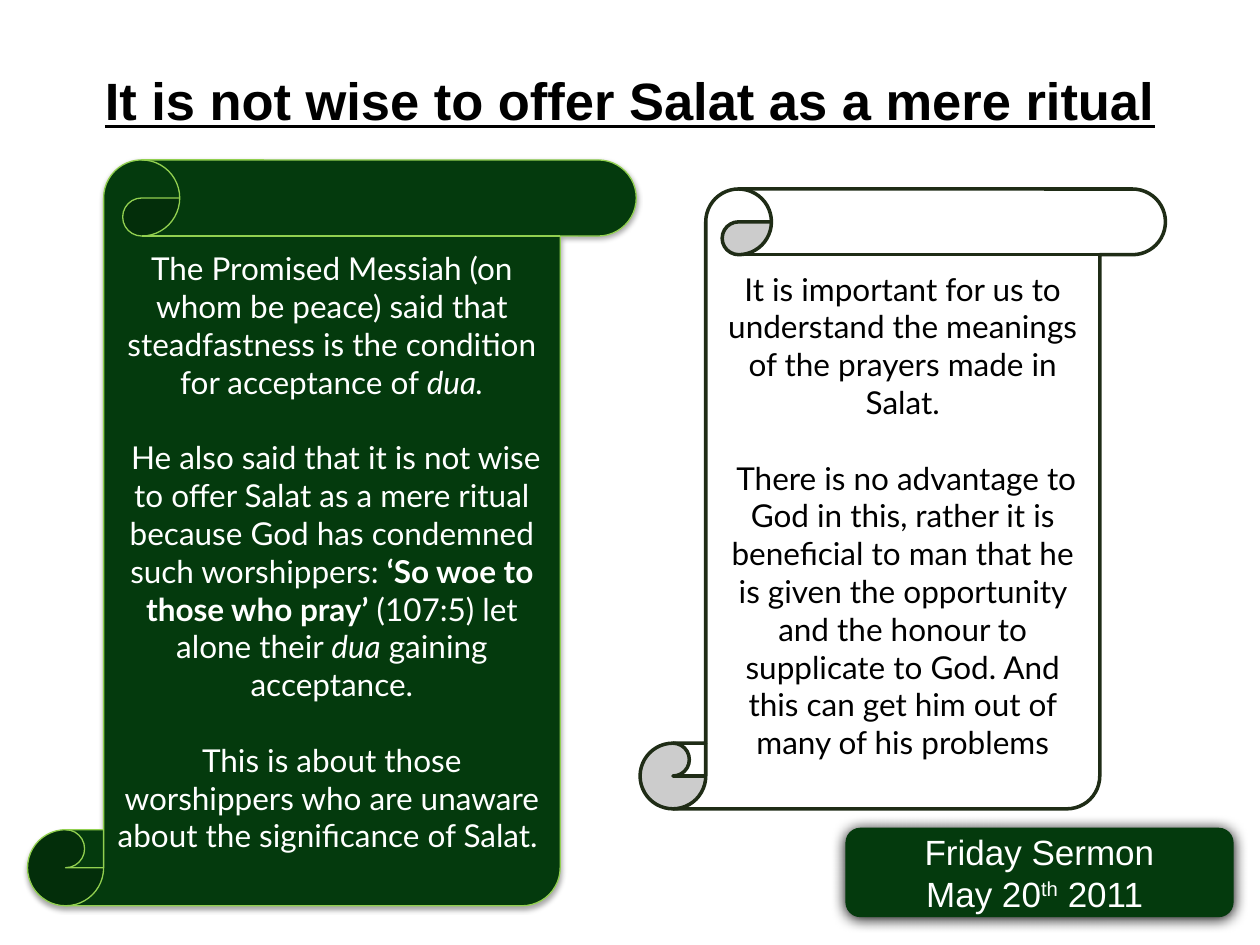
import pptx
import pptx.util
import pptx.dml.color
import pptx.enum.shapes
import pptx.enum.text
import pptx.oxml
import pptx.oxml.ns

Pt = pptx.util.Pt
RGB = pptx.dml.color.RGBColor
Kind = pptx.enum.shapes.MSO_SHAPE
Align = pptx.enum.text.PP_ALIGN
Anchor = pptx.enum.text.MSO_ANCHOR

GREEN = RGB(0x04, 0x3A, 0x0D)
LIME = RGB(0x92, 0xD0, 0x50)
OLIVE = RGB(0x1F, 0x2C, 0x16)
WHITE = RGB(0xFF, 0xFF, 0xFF)
BLACK = RGB(0x00, 0x00, 0x00)

BOLD = {"bold": True}
SLANT = {"italic": True}
RAISED = {"raised": True}

# Each paragraph is a list of (words, format) runs.
TITLE = [[("It is not wise to offer Salat as a mere ritual", {"bold": True, "underline": True})]]
LEFT = [
    [("The Promised Messiah (on whom be peace) said that steadfastness is the "
      "condition for acceptance of ", {}), ("dua.", SLANT)],
    [(" He also said that it is not wise to offer Salat as a mere ritual because "
      "God has condemned such worshippers: ", {}),
     ("‘So woe to those who pray’", BOLD), (" (107:5) let alone their ", {}),
     ("dua", SLANT), (" gaining acceptance.", {})],
    [("This is about those worshippers who are unaware about the significance "
      "of Salat. ", {})],
]
RIGHT = [
    [("It is important for us to understand the meanings of the prayers made in "
      "Salat.", {})],
    [(" There is no advantage to God in this, rather it is beneficial to man that "
      "he is given the opportunity and the honour to supplicate to God. And this "
      "can get him out of many of his problems", {})],
]
DATE = [
    [("Friday Sermon", {})],
    [("May 20", {}), ("th", RAISED), (" 2011 ", {})],
]

SCROLL = {"name": "Lato", "size": Pt(18)}
SHAPES = [
    {"kind": Kind.VERTICAL_SCROLL, "box": (15.8, 91.4, 347.8, 426.2), "fill": GREEN,
     "line": (LIME, 0.75), "shade": (35, 3.1, 1.8), "text": LEFT,
     "font": SCROLL, "ink": WHITE, "gap": 21.6},
    {"kind": Kind.VERTICAL_SCROLL, "box": (365.8, 108, 300.2, 354.2), "fill": WHITE,
     "line": (OLIVE, 2), "shade": None, "text": RIGHT,
     "font": SCROLL, "ink": BLACK, "gap": 21.6},
    {"kind": Kind.ROUNDED_RECTANGLE, "box": (483.1, 473, 221.8, 51.1), "fill": GREEN,
     "line": None, "shade": (100, 8.5, 1), "text": DATE,
     "font": {"name": "Arial", "size": Pt(20)}, "ink": WHITE, "gap": 0},
]


def write(frame, paras, font, ink, gap=0):
    """Fill a text frame with centred paragraphs, gap points apart."""
    frame.word_wrap = True
    for i, runs in enumerate(paras):
        para = frame.add_paragraph() if i else frame.paragraphs[0]
        para.alignment = Align.CENTER
        para.space_before = Pt(gap if i else 0)
        for words, style in runs:
            run = para.add_run()
            run.text = words
            run.font.color.rgb = ink
            for key, value in {**font, **style}.items():
                if key == "raised":
                    run._r.get_or_add_rPr().set("baseline", "30000")
                else:
                    setattr(run.font, key, value)


def shade(shape, alpha, blur, drop):
    """Cast a black shadow straight down."""
    shape._element.spPr.append(pptx.oxml.parse_xml(
        f'<a:effectLst {pptx.oxml.ns.nsdecls("a")}>'
        f'<a:outerShdw blurRad="{Pt(blur)}" dist="{Pt(drop)}" dir="5400000" '
        f'algn="ctr" rotWithShape="0"><a:srgbClr val="{BLACK}">'
        f'<a:alpha val="{alpha * 1000}"/></a:srgbClr></a:outerShdw></a:effectLst>'))


def draw(slide, item):
    shape = slide.shapes.add_shape(item["kind"], *map(Pt, item["box"]))
    shape.fill.solid()
    shape.fill.fore_color.rgb = item["fill"]
    if item["line"]:
        color, width = item["line"]
        shape.line.color.rgb = color
        shape.line.width = Pt(width)
    else:
        shape.line.fill.background()
    if item["shade"]:
        shade(shape, *item["shade"])
    else:
        shape.shadow.inherit = False
    shape.text_frame.vertical_anchor = Anchor.MIDDLE
    write(shape.text_frame, item["text"], item["font"], item["ink"], item["gap"])


def main():
    deck = pptx.Presentation()
    deck.slide_width, deck.slide_height = Pt(720), Pt(540)
    slide = deck.slides.add_slide(deck.slide_layouts[6])

    head = slide.shapes.add_textbox(Pt(36), Pt(36), Pt(648), Pt(72)).text_frame
    margins = {"margin_left": 0, "margin_top": 3, "margin_right": 0, "margin_bottom": 0}
    for key, value in margins.items():
        setattr(head, key, Pt(value))
    write(head, TITLE, {"name": "Arial", "size": Pt(30)}, BLACK)

    for item in SHAPES:
        draw(slide, item)
    deck.save("out.pptx")


if __name__ == "__main__":
    main()
